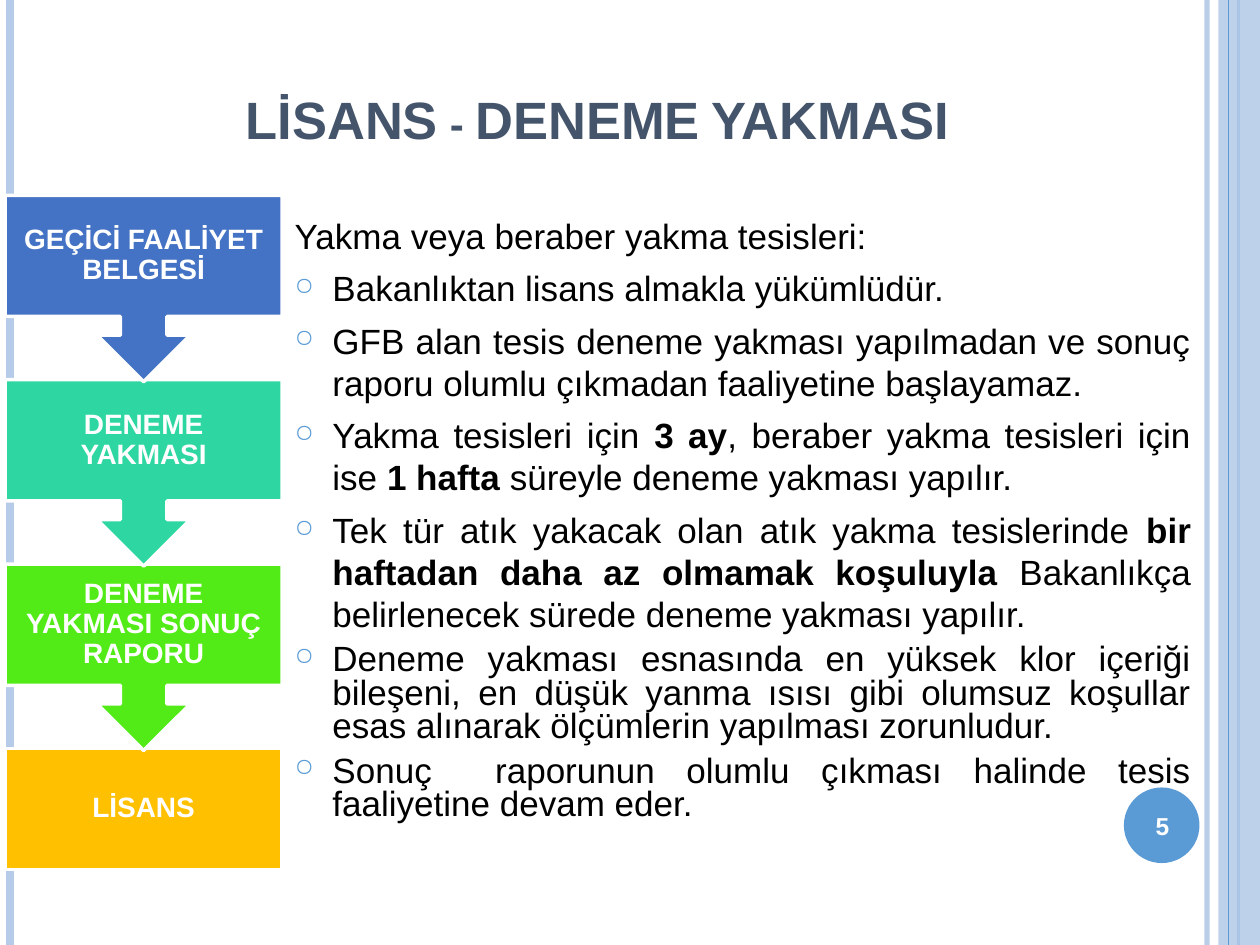
"""Build the slide on licensing and trial burning."""
from dataclasses import dataclass
from typing import Optional

from lxml.etree import SubElement
from pptx import Presentation
from pptx.dml.color import RGBColor
from pptx.enum.shapes import MSO_CONNECTOR, MSO_SHAPE
from pptx.enum.text import MSO_ANCHOR, PP_ALIGN
from pptx.oxml.ns import qn
from pptx.util import Inches, Pt

COLORS = {
    "pale": "B5CBE7", "blue": "5B9BD5", "slate": "44546A",
    "black": "000000", "white": "FFFFFF", "royal": "4472C4",
    "teal": "2ED7A1", "green": "53EB17", "gold": "FFC000",
}


@dataclass
class Rule:
    x: float
    color: str
    width: float
    alpha: int = 100


@dataclass
class Step:
    text: str
    color: str


@dataclass
class Item:
    texts: list[str]
    bullet: bool = True
    space: Optional[float] = None


RULES = [Rule(9.58, "pale", 3, 93), Rule(0.08, "pale", 4.5), Rule(9.83, "blue", 1.5)]
THIN = Rule(9.75, "blue", 0.75)
STEPS = [
    Step("GEÇİCİ FAALİYET BELGESİ", "royal"),
    Step("DENEME YAKMASI", "teal"),
    Step("DENEME YAKMASI SONUÇ RAPORU", "green"),
    Step("LİSANS", "gold"),
]
ITEMS = [
    Item(["Yakma veya beraber yakma tesisleri:"], bullet=False),
    Item(["Bakanlıktan lisans almakla yükümlüdür."]),
    Item(["GFB alan tesis deneme yakması yapılmadan ve sonuç raporu olumlu "
          "çıkmadan faaliyetine başlayamaz."]),
    Item(["Yakma tesisleri için ", "3 ay", ", beraber yakma tesisleri için ise ",
          "1 hafta ", "süreyle deneme yakması yapılır."]),
    Item(["Tek tür atık yakacak olan atık yakma tesislerinde ",
          "bir haftadan daha az olmamak koşuluyla",
          " Bakanlıkça belirlenecek sürede deneme yakması yapılır."]),
    Item(["Deneme yakması esnasında en yüksek klor içeriği bileşeni, en düşük "
          "yanma ısısı gibi olumsuz koşullar esas alınarak ölçümlerin yapılması "
          "zorunludur."], space=0.8),
    Item(["Sonuç  raporunun olumlu çıkması halinde tesis faaliyetine devam eder."],
         space=0.8),
]
LEFT, TOP, LAST, WIDE, TALL, FULL = 0.04, 1.55, 5.94, 2.2, 0.96, 1.48
PITCH = (LAST - TOP) / (len(STEPS) - 1)


def tint(name: str) -> RGBColor:
    """Return a named colour."""
    return RGBColor.from_string(COLORS[name])


def fade(shape, alpha: int) -> None:
    """Make the first solid colour of a shape partly clear."""
    color = next(shape._element.iter(qn("a:srgbClr")))
    SubElement(color, qn("a:alpha"), val=str(alpha * 1000))


def style(para, size: float, color: str, bold: bool = False) -> None:
    """Set the font of a paragraph."""
    font = para.font
    font.name, font.size, font.bold = "Arial", Pt(size), bold
    font.color.rgb = tint(color)


def draw_rule(slide, rule: Rule) -> None:
    """Draw a full-height vertical line."""
    x = Inches(rule.x)
    line = slide.shapes.add_connector(MSO_CONNECTOR.STRAIGHT, x, 0, x, Inches(7.5))
    line.line.color.rgb = tint(rule.color)
    line.line.width = Pt(rule.width)
    if rule.alpha < 100:
        fade(line, rule.alpha)
    SubElement(line._element.spPr, qn("a:effectLst"))


def draw_shape(slide, kind, box: tuple, color: str, edge: float = 0):
    """Draw a filled shape, with a white edge if a width is given."""
    shape = slide.shapes.add_shape(kind, *map(Inches, box))
    shape.shadow.inherit = False
    shape.fill.solid()
    shape.fill.fore_color.rgb = tint(color)
    if edge:
        shape.line.color.rgb = tint("white")
        shape.line.width = Pt(edge)
    else:
        shape.line.fill.background()
    return shape


def draw_label(slide, box: tuple, text: str, size: float, inset: float,
               space: float = 1.0) -> None:
    """Write a white centred label."""
    frame = slide.shapes.add_textbox(*map(Inches, box)).text_frame
    frame.word_wrap = True
    frame.vertical_anchor = MSO_ANCHOR.MIDDLE
    frame.margin_left = frame.margin_right = Inches(inset)
    frame.margin_top = frame.margin_bottom = Inches(inset)
    para = frame.paragraphs[0]
    para.text, para.alignment, para.line_spacing = text, PP_ALIGN.CENTER, space
    style(para, size, "white", True)


def draw_step(slide, rank: int, step: Step) -> None:
    """Draw one step of the chain, with an arrow unless it is the last."""
    y = TOP + rank * PITCH
    box = (LEFT, y, WIDE, TALL)
    if rank == len(STEPS) - 1:
        draw_shape(slide, MSO_SHAPE.RECTANGLE, box, step.color, 2)
    else:
        arrow = draw_shape(slide, MSO_SHAPE.UP_ARROW_CALLOUT,
                           (LEFT, y, WIDE, FULL), step.color, 2)
        arrow.rotation = 180
    draw_label(slide, box, step.text, 16, 0.12, 0.9)


def add_bullet(para) -> None:
    """Give a paragraph a hanging ring bullet."""
    props = para._p.get_or_add_pPr()
    props.set("marL", str(Inches(0.3)))
    props.set("indent", str(-Inches(0.3)))
    SubElement(SubElement(props, qn("a:buClr")), qn("a:srgbClr"), val=COLORS["blue"])
    SubElement(props, qn("a:buSzPct"), val="70000")
    SubElement(props, qn("a:buChar"), char="○")


def draw_body(slide) -> None:
    """Write the list; every second text of an item is bold."""
    box = slide.shapes.add_textbox(*map(Inches, (2.24, 1.65, 7.31, 5.01)))
    frame = box.text_frame
    frame.word_wrap = True
    for rank, item in enumerate(ITEMS):
        para = frame.add_paragraph() if rank else frame.paragraphs[0]
        para.alignment = PP_ALIGN.JUSTIFY
        if rank:
            para.space_before = Pt(6)
        if item.space:
            para.line_spacing = item.space
        if item.bullet:
            add_bullet(para)
        style(para, 20, "black")
        for spot, text in enumerate(item.texts):
            run = para.add_run()
            run.text = text
            if spot % 2:
                run.font.bold = True


def draw_title(slide) -> None:
    """Place and fill the title."""
    title = slide.shapes.title
    title.left, title.top = Inches(1.85), Inches(0.29)
    title.width, title.height = Inches(6.82), Inches(0.95)
    frame = title.text_frame
    frame.vertical_anchor = MSO_ANCHOR.BOTTOM
    para = frame.paragraphs[0]
    para.text, para.alignment = "LİSANS - DENEME YAKMASI", PP_ALIGN.LEFT
    style(para, 30, "slate", True)
    para.runs[0].font._element.set("cap", "small")


def main() -> None:
    """Build and save the slide."""
    deck = Presentation()
    deck.slide_width, deck.slide_height = Inches(10), Inches(7.5)
    slide = deck.slides.add_slide(deck.slide_layouts[5])
    for rule in RULES:
        draw_rule(slide, rule)
    fade(draw_shape(slide, MSO_SHAPE.RECTANGLE, (9.67, 0, 0.33, 7.5), "pale"), 87)
    draw_rule(slide, THIN)
    draw_shape(slide, MSO_SHAPE.OVAL, (8.92, 6.25, 0.6, 0.6), "blue")
    draw_title(slide)
    draw_body(slide)
    draw_label(slide, (8.89, 6.27, 0.67, 0.57), "5", 14, 0.05)
    for rank, step in reversed(list(enumerate(STEPS))):
        draw_step(slide, rank, step)
    deck.save("out.pptx")


if __name__ == "__main__":
    main()
